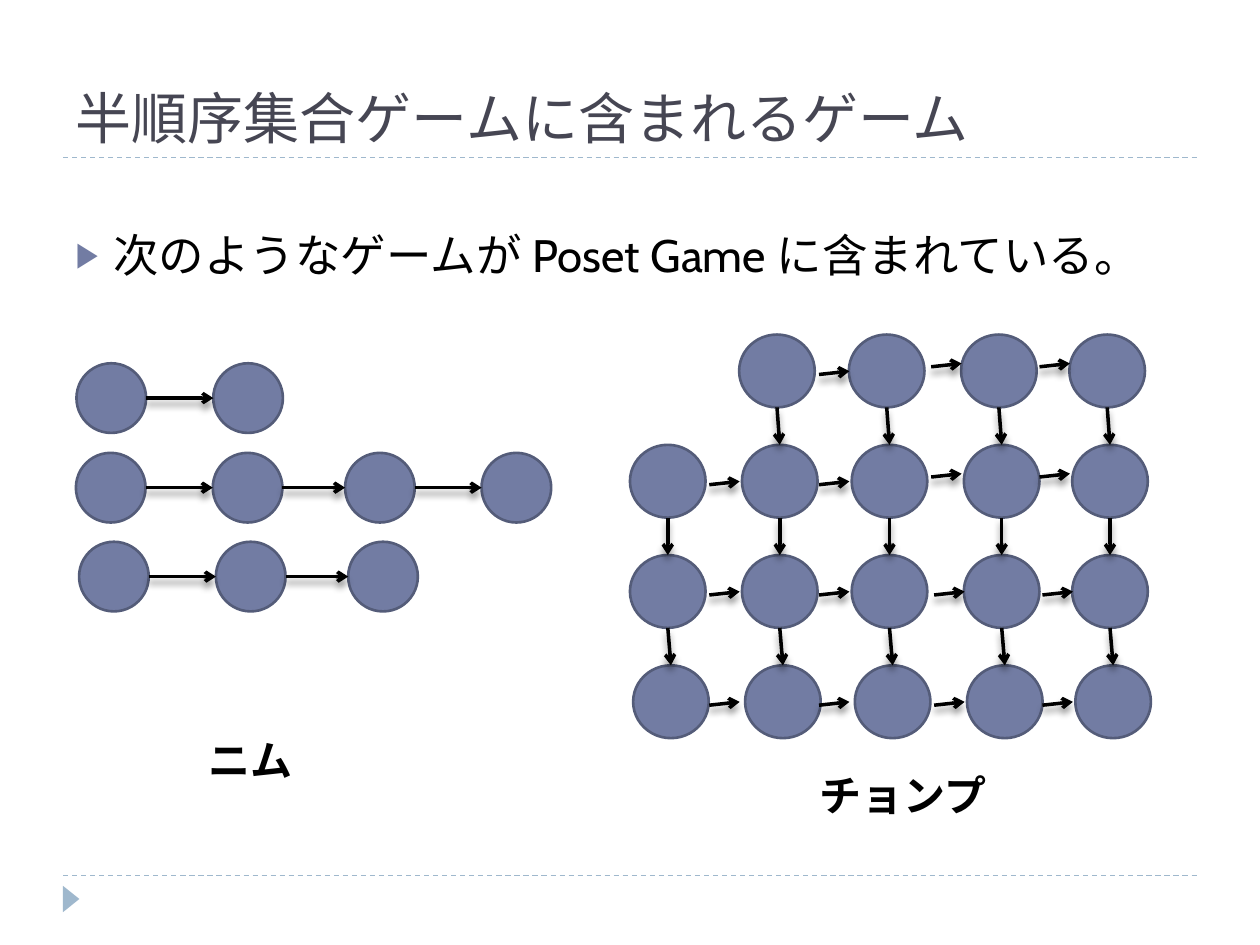
from itertools import pairwise

from lxml.etree import SubElement
from pptx import Presentation
from pptx.dml.color import RGBColor
from pptx.enum.dml import MSO_LINE
from pptx.enum.shapes import MSO_CONNECTOR, MSO_SHAPE
from pptx.enum.text import MSO_ANCHOR, MSO_AUTO_SIZE, PP_ALIGN
from pptx.oxml.ns import qn
from pptx.util import Pt

COLORS = {
    "title": "464653",
    "text": "000000",
    "node": "727CA3",
    "outline": "545C79",
    "accent": "9FB8CD",
}
NIM_SIZE = 39.8
NIM_OFFSETS = [0, 78.2, 153.8, 231.8]
NIM_HEAPS = [(43.7, 207.6, 2), (43.4, 258.8, 4), (45.2, 309.6, 3)]
CHOMP_WIDTH = 43.2
CHOMP_HEIGHT = 41.6
CHOMP_COLUMNS = [360, 424, 486.7, 550.8, 612.7]
CHOMP_TOP = 191.2
CHOMP_STEP = 63
CHOMP_SHIFTS = [-1.6, 0, 0, 1.8]


def color(name):
    return RGBColor.from_string(COLORS[name])


def place(shape, left, top, width, height):
    shape.left, shape.top = Pt(left), Pt(top)
    shape.width, shape.height = Pt(width), Pt(height)


def add_span(para, text, font, size, color_name, bold=False):
    span = para.add_run()
    span.text = text
    span.font.name = font
    span.font.size = Pt(size)
    span.font.bold = bold
    span.font.color.rgb = color(color_name)


def add_line(shapes, start, end, color_name, weight):
    points = [Pt(value) for value in (*start, *end)]
    line = shapes.add_connector(MSO_CONNECTOR.STRAIGHT, *points)
    line.line.color.rgb = color(color_name)
    line.line.width = Pt(weight)
    effects = SubElement(line.element.spPr, qn("a:effectLst"))
    return line, effects


def add_rule(page, top):
    rule, _ = add_line(page.shapes, (36, top), (684, top), "accent", 0.75)
    rule.line.dash_style = MSO_LINE.DASH


def add_arrow(group, start, end):
    arrow, effects = add_line(group.shapes, start, end, "text", 2)
    SubElement(arrow.line._get_or_add_ln(), qn("a:tailEnd"), type="arrow")
    shadow = SubElement(
        effects, qn("a:outerShdw"), blurRad=str(Pt(4)), dist=str(Pt(3.4)),
        dir="5400000", rotWithShape="0",
    )
    tint = SubElement(shadow, qn("a:srgbClr"), val=COLORS["text"])
    SubElement(tint, qn("a:alpha"), val="40000")


def add_node(group, left, top, width, height):
    box = [Pt(value) for value in (left, top, width, height)]
    node = group.shapes.add_shape(MSO_SHAPE.OVAL, *box)
    node.shadow.inherit = False
    node.fill.solid()
    node.fill.fore_color.rgb = color("node")
    node.line.color.rgb = color("outline")
    node.line.width = Pt(1.5)


def add_corner_mark(page):
    mark = page.shapes.add_shape(
        MSO_SHAPE.ISOSCELES_TRIANGLE, Pt(33.1), Pt(509), Pt(15.1), Pt(9.4)
    )
    mark.rotation = 90
    mark.shadow.inherit = False
    mark.fill.solid()
    mark.fill.fore_color.rgb = color("accent")
    mark.line.fill.background()


def fill_title(title, text):
    place(title, 36, 12.2, 648, 77.8)
    frame = title.text_frame
    frame.auto_size = MSO_AUTO_SIZE.NONE
    frame.vertical_anchor = MSO_ANCHOR.BOTTOM
    para = frame.paragraphs[0]
    para.alignment = PP_ALIGN.LEFT
    add_span(para, text, "Roboto Slab", 32, "title")


def fill_body(body, text):
    place(body, 36, 126, 648, 54)
    frame = body.text_frame
    frame.auto_size = MSO_AUTO_SIZE.NONE
    para = frame.paragraphs[0]
    para.space_before = Pt(6)
    properties = para._p.get_or_add_pPr()
    properties.set("marL", str(Pt(21.6)))
    properties.set("indent", str(Pt(-21.6)))
    bullet_color = SubElement(properties, qn("a:buClr"))
    SubElement(bullet_color, qn("a:srgbClr"), val=COLORS["node"])
    SubElement(properties, qn("a:buSzPct"), val="76000")
    SubElement(properties, qn("a:buChar"), char="▶")
    add_span(para, text, "Cabin", 26, "text")


def add_label(page, text, left, top, width):
    box = page.shapes.add_textbox(Pt(left), Pt(top), Pt(width), Pt(36))
    frame = box.text_frame
    frame.word_wrap = True
    frame.auto_size = MSO_AUTO_SIZE.SHAPE_TO_FIT_TEXT
    add_span(frame.paragraphs[0], text, "Cabin", 24, "text", bold=True)


def add_nim(page):
    group = page.shapes.add_group_shape()
    for left, top, count in NIM_HEAPS:
        lefts = [left + offset for offset in NIM_OFFSETS[:count]]
        middle = top + NIM_SIZE / 2
        for node_left in lefts:
            add_node(group, node_left, top, NIM_SIZE, NIM_SIZE)
        for before, after in pairwise(lefts):
            add_arrow(group, (before + NIM_SIZE, middle), (after, middle))


def add_chomp(page):
    group = page.shapes.add_group_shape()
    tops = [CHOMP_TOP + row * CHOMP_STEP for row in range(len(CHOMP_SHIFTS))]
    for column, left in enumerate(CHOMP_COLUMNS):
        first_row = 1 if column == 0 else 0
        cells = [(left + shift, top) for shift, top in zip(CHOMP_SHIFTS, tops)]
        cells = cells[first_row:]
        for node_left, top in cells:
            add_node(group, node_left, top, CHOMP_WIDTH, CHOMP_HEIGHT)
        half = CHOMP_WIDTH / 2
        for (upper_left, upper_top), (lower_left, lower_top) in pairwise(cells):
            start = (upper_left + half, upper_top + CHOMP_HEIGHT)
            add_arrow(group, start, (lower_left + half, lower_top))
    for column, next_left in enumerate(CHOMP_COLUMNS[1:]):
        for row, top in enumerate(tops):
            if (column, row) == (0, 0):
                continue
            right_half = column >= 2
            start_x = next_left - 18.7 + (1.7 if right_half and row >= 2 else 0)
            start_y = top + (18.4 if right_half and row < 2 else 22.8)
            add_arrow(group, (start_x, start_y), (start_x + 17.4, start_y - 1.9))


def main():
    deck = Presentation()
    deck.slide_width, deck.slide_height = Pt(720), Pt(540)
    page = deck.slides.add_slide(deck.slide_layouts[1])
    for top in (500.4, 90):
        add_rule(page, top)
    add_corner_mark(page)
    fill_title(page.shapes.title, "半順序集合ゲームに含まれるゲーム")
    fill_body(page.placeholders[1], "次のようなゲームが Poset Game に含まれている。")
    add_chomp(page)
    add_label(page, "ニム", 112.3, 416.2, 78.5)
    add_label(page, "チョンプ", 461.5, 436.3, 112.3)
    add_nim(page)
    deck.save("out.pptx")


if __name__ == "__main__":
    main()
